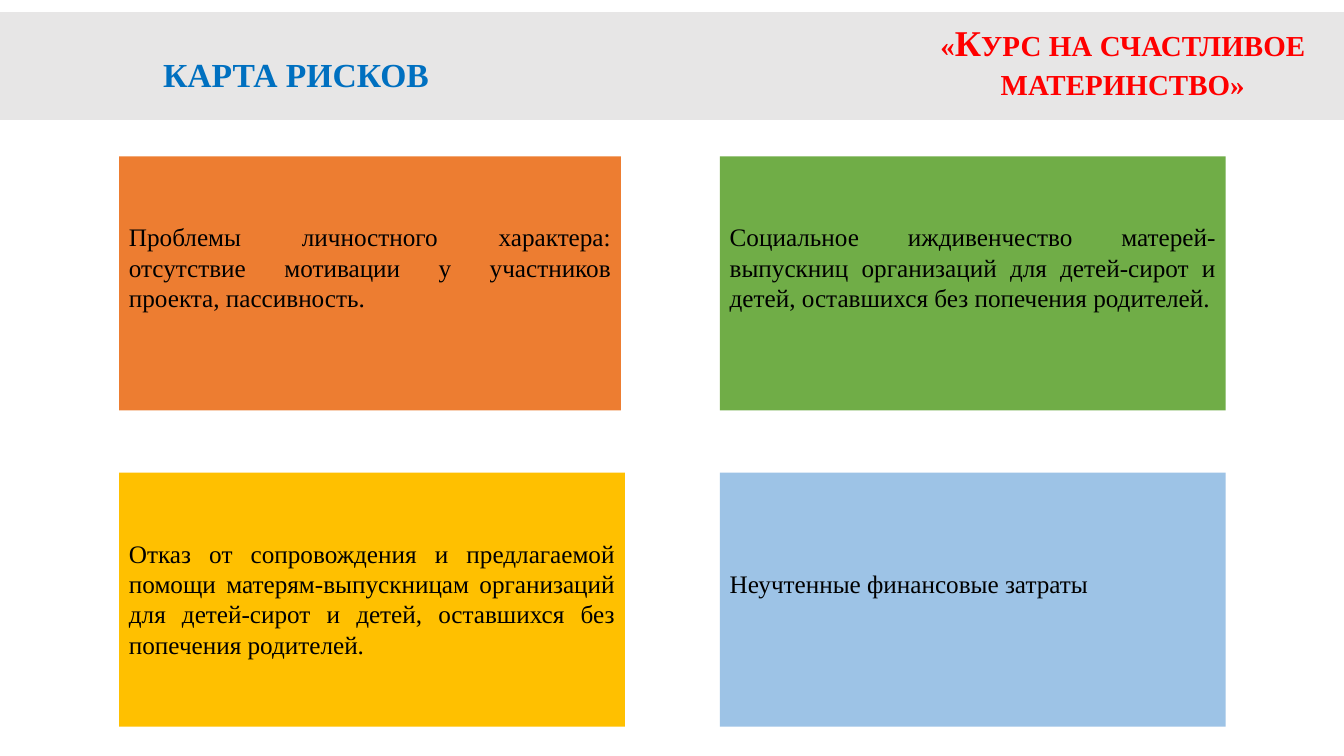
from pptx import Presentation
from pptx.dml.color import RGBColor
from pptx.enum.shapes import MSO_SHAPE
from pptx.enum.text import MSO_ANCHOR, PP_ALIGN
from pptx.util import Cm, Pt

FONT = "Times New Roman"
GREY = RGBColor(0xE7, 0xE6, 0xE6)
BLUE = RGBColor(0x00, 0x70, 0xC0)
RED = RGBColor(0xFF, 0x00, 0x00)
BLACK = RGBColor(0x00, 0x00, 0x00)
ORANGE = RGBColor(0xED, 0x7D, 0x31)
GREEN = RGBColor(0x70, 0xAD, 0x47)
YELLOW = RGBColor(0xFF, 0xC0, 0x00)
LIGHT_BLUE = RGBColor(0x9D, 0xC3, 0xE6)

WIDTH, HEIGHT = 33.87, 19.05
CARD_W, CARD_H = 12.75, 6.4
COLUMN_STEP, ROW_STEP = 15.14, 7.97

# column, row, width, top margin of the text, fill, text
RISKS = [
    (0, 0, 12.65, 1.65, ORANGE,
     "Проблемы личностного характера: отсутствие мотивации у участников "
     "проекта, пассивность."),
    (0, 1, CARD_W, 1.65, YELLOW,
     "Отказ от сопровождения и предлагаемой помощи матерям-выпускницам "
     "организаций для детей-сирот и детей, оставшихся без попечения родителей."),
    (1, 0, CARD_W, 1.65, GREEN,
     "Социальное иждивенчество матерей-выпускниц организаций для "
     "детей-сирот и детей, оставшихся без попечения родителей."),
    (1, 1, CARD_W, 2.42, LIGHT_BLUE, "Неучтенные финансовые затраты"),
]


def write(tf, text, size, color, bold=False, **paragraph_format):
    p = tf.paragraphs[0]
    for name, value in paragraph_format.items():
        setattr(p, name, value)
    r = p.add_run()
    r.text = text
    for name, value in {"name": FONT, "size": Pt(size), "bold": bold}.items():
        setattr(r.font, name, value)
    r.font.color.rgb = color
    return r


def add_rect(s, x, y, w, h, fill):
    sp = s.shapes.add_shape(MSO_SHAPE.RECTANGLE, Cm(x), Cm(y), Cm(w), Cm(h))
    sp.shadow.inherit = False
    sp.fill.solid()
    sp.fill.fore_color.rgb = fill
    sp.line.fill.background()
    return sp


def add_header(s, x, y, w, h):
    band = add_rect(s, x, y, w, h, GREY)
    band.line.color.rgb = GREY
    band.line.width = Pt(1)

    title = s.shapes.add_textbox(Cm(x + 3.86), Cm(y + 0.91), Cm(7.26), Cm(1.27))
    title.text_frame.word_wrap = False
    write(title.text_frame, "КАРТА РИСКОВ", 24, BLUE, bold=True)

    project = s.shapes.add_textbox(Cm(x + w - 10.7), Cm(y + 0.18), Cm(10.26), Cm(2.74))
    project.text_frame.word_wrap = True
    r = write(project.text_frame, "«Курс на счастливое материнство»", 25.9, RED,
              bold=True, alignment=PP_ALIGN.CENTER, line_spacing=0.9,
              space_before=Pt(10))
    r.font._element.set("cap", "small")


def add_risk_map(s, x, y):
    for column, row, w, margin_top, fill, text in RISKS:
        card = add_rect(s, x + column * COLUMN_STEP, y + row * ROW_STEP,
                        w, CARD_H, fill)
        tf = card.text_frame
        frame = {"word_wrap": True, "vertical_anchor": MSO_ANCHOR.TOP,
                 "margin_top": Cm(margin_top)}
        for name, value in frame.items():
            setattr(tf, name, value)
        write(tf, text, 18, BLACK, alignment=PP_ALIGN.JUSTIFY)


def main():
    prs = Presentation()
    prs.slide_width, prs.slide_height = Cm(WIDTH), Cm(HEIGHT)
    s = prs.slides.add_slide(prs.slide_layouts[6])
    add_header(s, 0, 0.33, WIDTH, 2.67)
    add_risk_map(s, 3, 3.94)
    prs.save("out.pptx")


if __name__ == "__main__":
    main()
